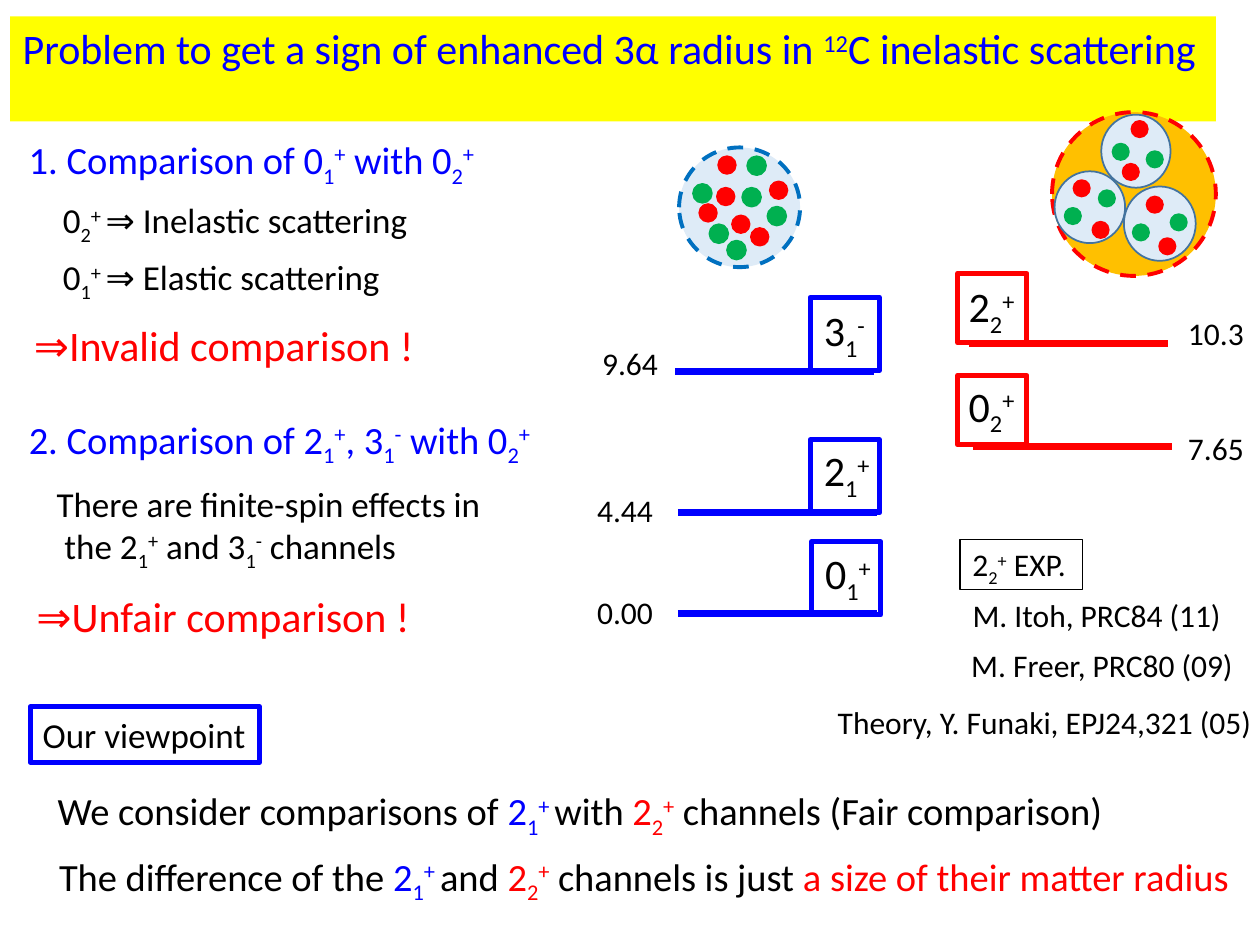
"""Build a slide on the 3α radius problem in 12C inelastic scattering."""
from lxml.etree import SubElement
from pptx import Presentation
from pptx.dml.color import RGBColor
from pptx.enum.dml import MSO_LINE
from pptx.enum.shapes import MSO_CONNECTOR, MSO_SHAPE
from pptx.enum.text import MSO_ANCHOR, MSO_AUTO_SIZE, PP_ALIGN
from pptx.oxml.ns import qn
from pptx.util import Emu, Pt

SCALE = 9144
FONT = "Calibri"
BLUE, RED, GREEN, BLACK = "0000FF", "FF0000", "00B050", "000000"
PALE, YELLOW, ORANGE = "DEEBF7", "FFFF00", "FFC000"
SUB, SUP = -25, 30


def px(*values):
    return [Emu(v * SCALE) for v in values]


def rgb(code):
    return RGBColor.from_string(code)


def state(spin, index, parity="+", color=None):
    """Runs of a nuclear state such as 0 with its index and parity."""
    return [(spin, color, 0), (index, color, SUB), (parity, color, SUP)]


def plain(text, color=None):
    return [(text, color, 0)]


def add_runs(p, runs, size, color):
    for text, run_color, base in runs:
        r = p.add_run()
        r.text = text
        r.font.name, r.font.size = FONT, Pt(size)
        r.font.color.rgb = rgb(run_color or color)
        if base:
            r._r.get_or_add_rPr().set("baseline", str(base * 1000))


def fill_text(sp, paragraphs, size, color, wrap=False):
    tf = sp.text_frame
    tf.word_wrap = wrap
    tf.auto_size = MSO_AUTO_SIZE.SHAPE_TO_FIT_TEXT
    tf.vertical_anchor = MSO_ANCHOR.TOP
    for i, runs in enumerate(paragraphs):
        p = tf.add_paragraph() if i else tf.paragraphs[0]
        p.alignment = PP_ALIGN.LEFT
        add_runs(p, runs, size, color)


def add_text(s, box, size, *paragraphs, color=BLACK):
    sp = s.shapes.add_textbox(*px(*box))
    fill_text(sp, paragraphs, size, color)
    return sp


def outline(sp, color, width):
    sp.line.color.rgb = rgb(color)
    sp.line.width = Pt(width)


def add_frame(s, box, color):
    sp = s.shapes.add_shape(MSO_SHAPE.RECTANGLE, *px(*box))
    sp.shadow.inherit = False
    sp.fill.background()
    outline(sp, color, 3)


def add_ellipse(group, box, fill, line, width=1, dashed=False):
    sp = group.shapes.add_shape(MSO_SHAPE.OVAL, *px(*box))
    sp.shadow.inherit = False
    sp.fill.solid()
    sp.fill.fore_color.rgb = rgb(fill)
    outline(sp, line, width)
    if dashed:
        sp.line.dash_style = MSO_LINE.DASH


def add_dots(group, points, size, color):
    for x, y in points:
        add_ellipse(group, (x, y, size, size), color, color)


def add_level(s, x, y, energy, energy_at, label, label_at, frame, color):
    """A level line with its energy, framed state and label."""
    line = s.shapes.add_connector(MSO_CONNECTOR.STRAIGHT, *px(x, y, x + 158, y))
    outline(line, color, 4)
    SubElement(line._element.spPr, qn("a:effectLst"))
    add_text(s, (*energy_at, 65, 40), 18, plain(energy))
    add_text(s, (*label_at, 60, 50), 24, label)
    add_frame(s, frame, color)


def add_title(s):
    sp = s.shapes.title
    sp.left, sp.top, sp.width, sp.height = px(8, 13, 957, 50)
    sp.fill.solid()
    sp.fill.fore_color.rgb = rgb(YELLOW)
    runs = [("Problem to get a sign of enhanced 3α radius in ", None, 0),
            ("12", None, SUP), ("C inelastic scattering", None, 0)]
    fill_text(sp, [runs], 24, BLUE, wrap=True)


def add_compact_nucleus(s):
    group = s.shapes.add_group_shape()
    add_ellipse(group, (539, 117, 96, 95), PALE, "0070C0", 2.25, True)
    add_dots(group, [(569, 149), (596, 181), (555, 162), (581, 171),
                     (570, 124), (611, 144)], 14, RED)
    add_dots(group, [(563, 178), (550, 146), (577, 191), (593, 124),
                     (609, 164), (589, 149)], 15, GREEN)


def add_cluster_nucleus(s):
    group = s.shapes.add_group_shape()
    add_ellipse(group, (835, 89, 130, 130), ORANGE, RED, 2.25, True)
    for box in [(874, 91, 55, 58), (837, 136, 56, 57), (892, 148, 57, 59)]:
        add_ellipse(group, box, PALE, "43739E")
    add_dots(group, [(845, 165), (929, 170), (872, 151), (910, 120),
                     (883, 114), (899, 178)], 13, GREEN)
    add_dots(group, [(898, 96), (910, 156), (852, 143), (867, 176),
                     (891, 130), (920, 189)], 13, RED)


def add_levels(s):
    for level in [
        (536, 295, "9.64", (468, 268), state("3", "1", "-"), (644, 237), (643, 236, 55, 58), BLUE),
        (538, 407, "4.44", (464, 385), state("2", "1"), (644, 348), (643, 349, 55, 58), BLUE),
        (538, 487, "0.00", (464, 466), state("0", "1"), (645, 430), (644, 430, 55, 58), BLUE),
        (772, 354, "7.65", (933, 336), state("0", "2"), (759, 297), (760, 298, 55, 55), RED),
        (769, 273, "10.3", (933, 244), state("2", "2"), (759, 218), (760, 217, 55, 55), RED),
    ]:
        add_level(s, *level)


def add_comparisons(s):
    add_text(s, (13, 103, 383, 47), 22, plain("1. Comparison of ") + state("0", "1")
             + plain(" with ") + state("0", "2"), color=BLUE)
    add_text(s, (40, 153, 307, 44), 20, state("0", "2", "+ ") + plain("⇒ Inelastic scattering"))
    add_text(s, (40, 198, 284, 44), 20, state("0", "1", "+ ") + plain("⇒ Elastic scattering"))
    add_text(s, (17, 249, 330, 50), 24, plain("⇒Invalid comparison !"), color=RED)
    add_text(s, (13, 325, 438, 47), 22, plain("2. Comparison of ") + state("2", "1")
             + plain(", ") + state("3", "1", "-") + plain(" with ") + state("0", "2"), color=BLUE)
    add_text(s, (35, 378, 361, 77), 20, plain("There are finite-spin effects in"),
             plain(" the ") + state("2", "1") + plain(" and ") + state("3", "1", "-")
             + plain(" channels"))
    add_text(s, (19, 464, 325, 50), 24, plain("⇒Unfair comparison !"), color=RED)


def add_references(s):
    sp = add_text(s, (762, 428, 97, 40), 18, state("2", "2") + plain(" EXP."))
    outline(sp, BLACK, 0.75)
    add_text(s, (762, 468, 219, 40), 18, plain("M. Itoh, PRC84 (11)"))
    add_text(s, (761, 508, 230, 40), 18, plain("M. Freer, PRC80 (09)"))
    add_text(s, (655, 553, 352, 40), 18, plain("Theory, Y. Funaki, EPJ24,321 (05)"))


def add_viewpoint(s):
    sp = add_text(s, (24, 561, 182, 44), 20, plain("Our viewpoint"))
    outline(sp, BLUE, 3)
    first, second = state("2", "1", "+ ", BLUE), state("2", "2", "+", RED)
    add_text(s, (36, 620, 866, 47), 22, plain("We consider comparisons of ") + first
             + plain("with ") + second + plain(" channels (Fair comparison)"))
    add_text(s, (37, 672, 975, 47), 22, plain("The difference of the ") + first
             + plain("and ") + second + plain(" channels is just ")
             + plain("a size of their matter radius", RED))


def main():
    prs = Presentation()
    prs.slide_width, prs.slide_height = px(1000, 750)
    s = prs.slides.add_slide(prs.slide_layouts[5])
    add_title(s)
    add_levels(s)
    add_compact_nucleus(s)
    add_cluster_nucleus(s)
    add_comparisons(s)
    add_references(s)
    add_viewpoint(s)
    prs.save("out.pptx")


if __name__ == "__main__":
    main()
